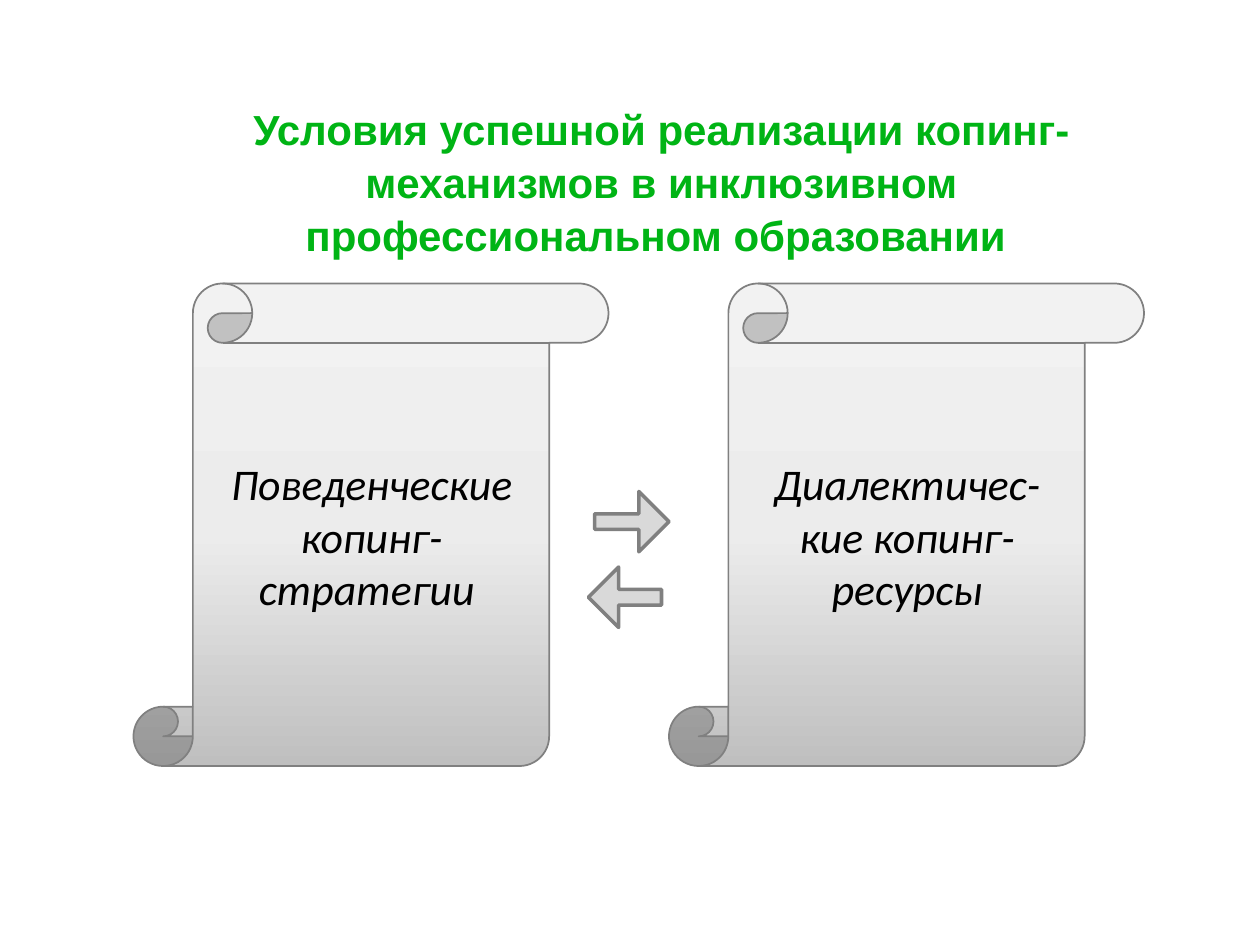
from copy import deepcopy

from pptx import Presentation
from pptx.dml.color import RGBColor
from pptx.enum.shapes import MSO_SHAPE
from pptx.enum.text import MSO_ANCHOR, MSO_AUTO_SIZE, PP_ALIGN
from pptx.util import Inches, Pt

SCROLL = MSO_SHAPE.VERTICAL_SCROLL
RIGHT, LEFT = MSO_SHAPE.RIGHT_ARROW, MSO_SHAPE.LEFT_ARROW
TOP, CENTER, NO_FIT = MSO_ANCHOR.TOP, PP_ALIGN.CENTER, MSO_AUTO_SIZE.NONE
TITLE_ONLY = 5
WIDTH, HEIGHT = Inches(10), Inches(7.5)
COLUMN, ROW = WIDTH / 100, HEIGHT / 75
GREY = "808080"
GRADIENT = ((0, "F2F2F2"), (0.52, "ECECEC"), (1, "BFBFBF"))
HEADING = {"name": "Arial", "size": Pt(24), "bold": True, "italic": False}
CAPTION = {"name": "Calibri", "size": Pt(25), "bold": False, "italic": True}
FRAME = {"word_wrap": True, "auto_size": NO_FIT, "vertical_anchor": TOP}
SCROLL_SIZE = (37.7, 38.3)
SCROLLS = (
    (10.6, "Поведенческие копинг-стратегии "),
    (53.1, "Диалектичес-кие копинг-ресурсы"),
)
ARROWS = ((RIGHT, (47.2, 39, 5.9, 4.8)), (LEFT, (46.7, 45, 5.8, 4.8)))


def color(value):
    """Turn a hex string into a colour."""
    return RGBColor.from_string(value)


def place(box):
    """Turn grid columns and rows into lengths on the slide."""
    left, top, width, height = box
    return [round(n) for n in (left * COLUMN, top * ROW, width * COLUMN, height * ROW)]


def apply(target, values):
    """Set every attribute named in a dict of format values."""
    for key, value in values.items():
        setattr(target, key, value)


def write(holder, wording, font, ink, spacing=1.0):
    """Fill a text holder with one centred paragraph."""
    frame = holder.text_frame
    apply(frame, FRAME)
    frame.text = wording
    paragraph = frame.paragraphs[0]
    apply(paragraph, {"alignment": CENTER, "line_spacing": spacing})
    run_font = paragraph.runs[0].font
    apply(run_font, font)
    run_font.color.rgb = color(ink)


def outline(shape, points):
    """Give a shape a grey line and no shadow."""
    shape.shadow.inherit = False
    shape.line.color.rgb = color(GREY)
    shape.line.width = Pt(points)


def shade(shape):
    """Fill a shape with the grey gradient from top to bottom."""
    shape.fill.gradient()
    shape.fill.gradient_angle = 270
    first = shape._element.spPr.find(".//{*}gs")
    first.addnext(deepcopy(first))
    for stop, (position, tone) in zip(shape.fill.gradient_stops, GRADIENT):
        stop.position = position
        stop.color.rgb = color(tone)


def add_heading(slide, box, wording):
    """Place the slide title in its placeholder."""
    title = slide.shapes.title
    apply(title, dict(zip(("left", "top", "width", "height"), place(box))))
    write(title, wording, HEADING, "00B415", 1.05)


def add_scroll(slide, box, wording):
    """Draw a scroll with its caption over the middle."""
    scroll = slide.shapes.add_shape(SCROLL, *place(box))
    outline(scroll, 1)
    shade(scroll)
    left, top = box[:2]
    caption = slide.shapes.add_textbox(*place((left + 6.5, top + 13.3, 24.8, 13.6)))
    write(caption, wording, CAPTION, "000000")


def add_arrow(slide, direction, box):
    """Draw a thin block arrow."""
    arrow = slide.shapes.add_shape(direction, *place(box))
    arrow.adjustments[0] = 0.26
    arrow.fill.solid()
    arrow.fill.fore_color.rgb = color("D9D9D9")
    outline(arrow, 2)


def main():
    """Build and save the slide."""
    deck = Presentation()
    apply(deck, {"slide_width": WIDTH, "slide_height": HEIGHT})
    slide = deck.slides.add_slide(deck.slide_layouts[TITLE_ONLY])
    add_heading(
        slide,
        (17.5, 7.5, 70, 13.1),
        "Условия успешной реализации копинг-механизмов в инклюзивном "
        "профессиональном образовании ",
    )
    for left, wording in SCROLLS:
        add_scroll(slide, (left, 22.5, *SCROLL_SIZE), wording)
    for direction, box in ARROWS:
        add_arrow(slide, direction, box)
    deck.save("out.pptx")


if __name__ == "__main__":
    main()
